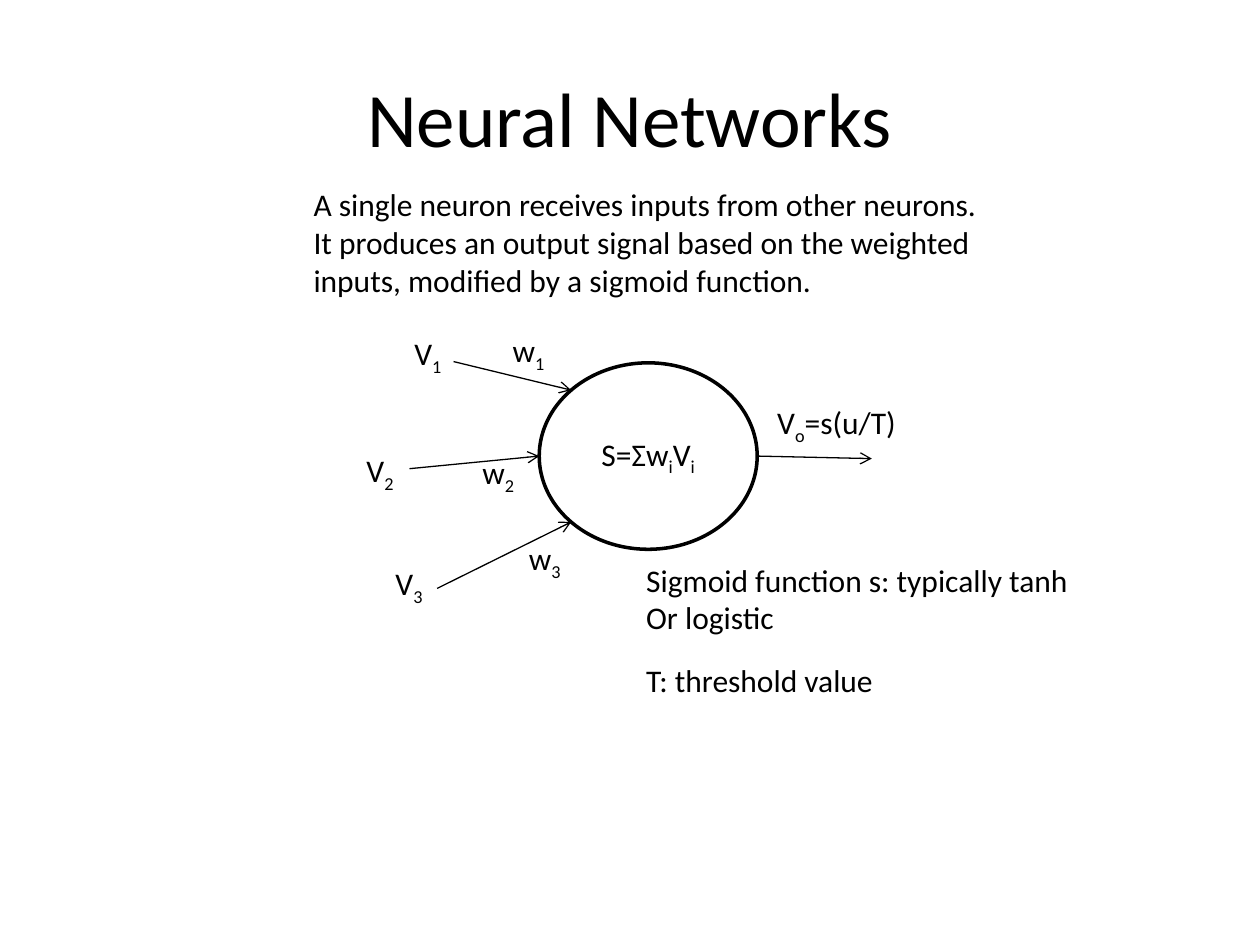
import pptx
import pptx.util
import pptx.dml.color
import pptx.enum.shapes
import pptx.enum.text
import pptx.oxml.ns
import lxml.etree

Inches = pptx.util.Inches
Pt = pptx.util.Pt
ALIGN = pptx.enum.text.PP_ALIGN
ANCHOR = pptx.enum.text.MSO_ANCHOR
COLORS = {"ink": "000000", "paper": "FFFFFF"}
FONT = "Calibri"


def color(name):
    return pptx.dml.color.RGBColor.from_string(COLORS[name])


def write_para(para, parts, size, align):
    para.alignment = align
    for index, part in enumerate(parts):
        span = para.add_run()
        span.text = part
        span.font.name = FONT
        span.font.size = Pt(size)
        span.font.color.rgb = color("ink")
        if index % 2:
            span.font._element.set("baseline", "-25000")


def write_frame(frame, paragraphs, size=18, align=ALIGN.LEFT):
    for index, parts in enumerate(paragraphs):
        para = frame.add_paragraph() if index else frame.paragraphs[0]
        write_para(para, parts, size, align)


def add_text(page, box, paragraphs, wrap=False, size=18, align=ALIGN.LEFT, anchor=ANCHOR.TOP):
    frame = page.shapes.add_textbox(*map(Inches, box)).text_frame
    frame.word_wrap = wrap
    frame.vertical_anchor = anchor
    write_frame(frame, paragraphs, size, align)


def add_arrow(page, start, end):
    arrow = page.shapes.add_connector(
        pptx.enum.shapes.MSO_CONNECTOR.STRAIGHT, *map(Inches, (*start, *end)))
    arrow.line.color.rgb = color("ink")
    arrow.line.width = Pt(0.75)
    qn = pptx.oxml.ns.qn
    lxml.etree.SubElement(arrow.line._get_or_add_ln(), qn("a:tailEnd"), type="arrow")
    lxml.etree.SubElement(arrow._element.spPr, qn("a:effectLst"))


def add_title(page, box):
    add_text(page, box, [["Neural Networks"]], True, 44, ALIGN.CENTER, ANCHOR.MIDDLE)


def add_introduction(page, box):
    add_text(page, box, [
        ["A single neuron receives inputs from other neurons."],
        ["It produces an output signal based on the weighted inputs, "
         "modified by a sigmoid function."],
    ], wrap=True)


def add_neuron(page, box):
    left, top, width, height = box
    cell = page.shapes.add_shape(
        pptx.enum.shapes.MSO_SHAPE.OVAL, *map(Inches, box))
    cell.shadow.inherit = False
    cell.fill.solid()
    cell.fill.fore_color.rgb = color("paper")
    cell.line.color.rgb = color("ink")
    cell.line.width = Pt(2)
    cell.text_frame.vertical_anchor = ANCHOR.MIDDLE
    write_frame(cell.text_frame, [["S=Σw", "i", "V", "i"]], align=ALIGN.CENTER)

    middle = top + height / 2
    diagonal = 0.5 ** 0.5
    inset_x = width / 2 * (1 - diagonal)
    rise = height / 2 * diagonal
    inputs = [
        ((-0.68, -0.01), (-1.09, -0.28), (-0.31, -0.3), (inset_x, -rise)),
        ((-1.03, 0.84), (-1.47, 0.65), (-0.55, 0.67), (0, 0)),
        ((-0.81, 1.79), (-1.24, 1.55), (-0.18, 1.35), (inset_x, rise)),
    ]
    for number, (start, value, weight, entry) in enumerate(inputs, 1):
        add_arrow(page, (left + start[0], top + start[1]),
                  (left + entry[0], middle + entry[1]))
        add_text(page, (left + value[0], top + value[1], 0.43, 0.4), [["V", str(number)]])
        add_text(page, (left + weight[0], top + weight[1], 0.47, 0.4), [["w", str(number)]])

    right = left + width
    add_arrow(page, (right, middle), (right + 0.91, middle + 0.02))
    add_text(page, (right + 0.06, top + 0.27, 1.16, 0.4), [["V", "o", "=s(u/T)"]])


def add_notation(page, box):
    left, top, width, height = box
    add_text(page, (left, top, width, 0.71),
             [["Sigmoid function s: typically tanh"], ["Or logistic"]])
    add_text(page, (left, top + height - 0.4, 2.02, 0.4), [["T: threshold value"]])


def main():
    deck = pptx.Presentation()
    deck.slide_width = Inches(10)
    deck.slide_height = Inches(7.5)
    page = deck.slides.add_slide(deck.slide_layouts[6])
    add_title(page, (0.5, 0.3, 9, 1.25))
    add_introduction(page, (2.39, 1.42, 5.64, 1.01))
    add_neuron(page, (4.28, 2.88, 1.73, 1.48))
    add_notation(page, (5.03, 4.4, 3.59, 1.2))
    deck.save("out.pptx")


if __name__ == "__main__":
    main()
